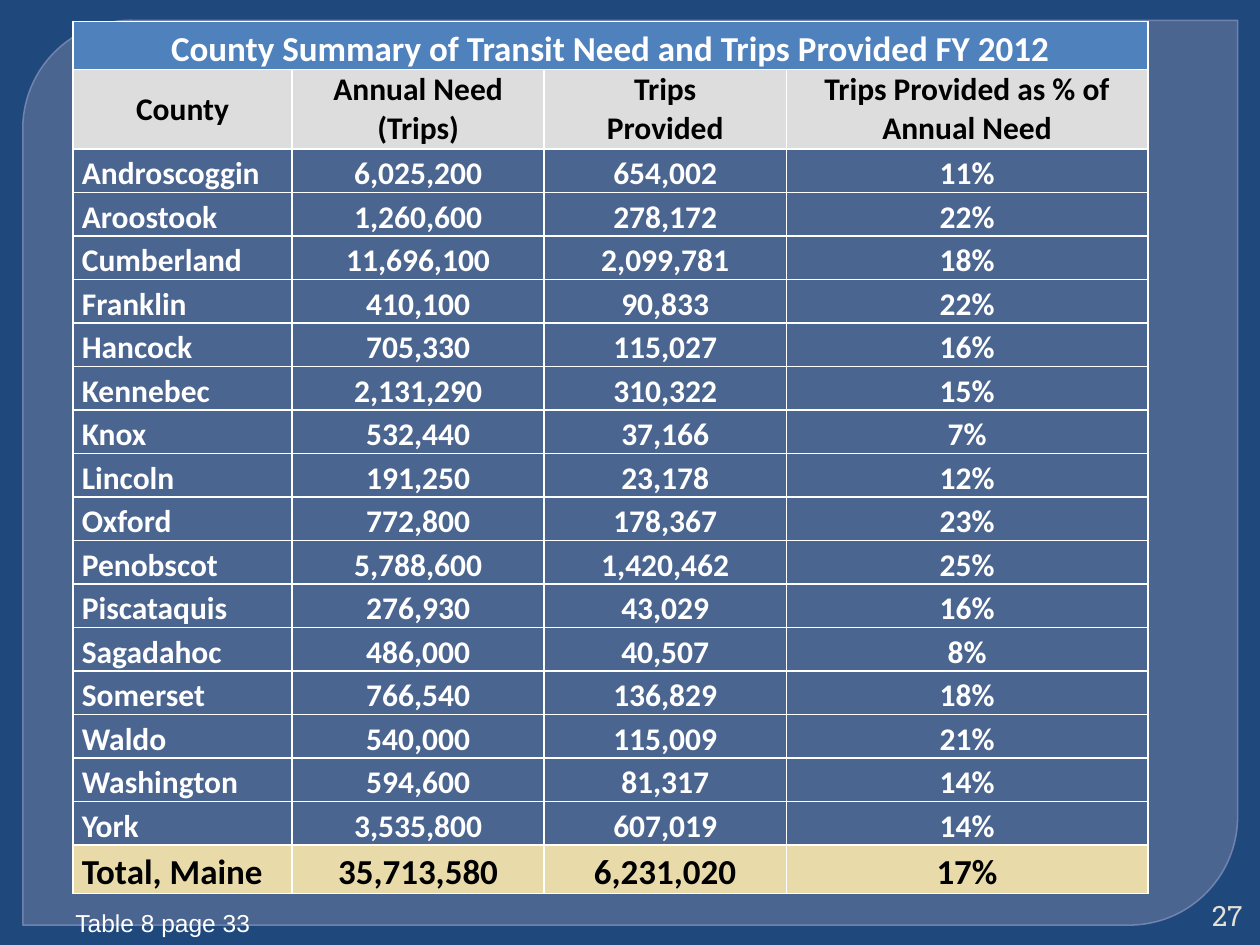
from lxml import etree
from pptx import Presentation
from pptx.dml.color import RGBColor
from pptx.enum.shapes import MSO_SHAPE
from pptx.enum.text import MSO_ANCHOR, PP_ALIGN
from pptx.oxml import parse_xml
from pptx.oxml.ns import nsdecls, qn
from pptx.util import Cm, Pt

LEFT, MID, RIGHT = PP_ALIGN.LEFT, PP_ALIGN.CENTER, PP_ALIGN.RIGHT
TOP, CENTRE = MSO_ANCHOR.TOP, MSO_ANCHOR.MIDDLE
THEME = {
    "back": "1F497D", "panel": "63759D", "edge": "7989B3",
    "band": "4F81BD", "head": "DDDDDD", "total": "E9DBA9",
    "light": "FFFFFF", "dark": "000000", "page": "E3E1D7",
    "body": "Calibri", "note": "Arial", "number": "Roboto Slab",
    "large": 20, "normal": 18, "mid": 16, "small": 14,
}
TITLE = "County Summary of Transit Need and Trips Provided FY 2012"
HEADS = ("County", "Annual Need\n(Trips)", "Trips\nProvided",
         "Trips Provided as % of Annual Need")
COUNTIES = [
    ("Androscoggin", "6,025,200", "654,002", "11%"),
    ("Aroostook", "1,260,600", "278,172", "22%"),
    ("Cumberland", "11,696,100", "2,099,781", "18%"),
    ("Franklin", "410,100", "90,833", "22%"),
    ("Hancock", "705,330", "115,027", "16%"),
    ("Kennebec", "2,131,290", "310,322", "15%"),
    ("Knox", "532,440", "37,166", "7%"),
    ("Lincoln", "191,250", "23,178", "12%"),
    ("Oxford", "772,800", "178,367", "23%"),
    ("Penobscot", "5,788,600", "1,420,462", "25%"),
    ("Piscataquis", "276,930", "43,029", "16%"),
    ("Sagadahoc", "486,000", "40,507", "8%"),
    ("Somerset", "766,540", "136,829", "18%"),
    ("Waldo", "540,000", "115,009", "21%"),
    ("Washington", "594,600", "81,317", "14%"),
    ("York", "3,535,800", "607,019", "14%"),
]
TOTAL = ("Total, Maine", "35,713,580", "6,231,020", "17%")


def write(frame, text, font, size, tint, align, bold=False, **gaps):
    """Fill a text frame; gaps are paragraph spacing values."""
    frame.word_wrap = True
    frame.text = text
    for para in frame.paragraphs:
        for key, value in {"alignment": align, **gaps}.items():
            setattr(para, key, value)
        look = {"name": THEME[font], "size": Pt(THEME[size]), "bold": bold}
        for key, value in look.items():
            setattr(para.runs[0].font, key, value)
        para.runs[0].font.color.rgb = RGBColor.from_string(THEME[tint])


def fade(fill, tint, alpha):
    """Set a solid fill with the given opacity in percent."""
    fill.solid()
    fill.fore_color.rgb = RGBColor.from_string(THEME[tint])
    node = fill._xPr.find(qn("a:solidFill"))[0]
    etree.SubElement(node, qn("a:alpha"), val=str(alpha * 1000))


deck = Presentation()
deck.slide_width, deck.slide_height = Cm(25.4), Cm(19.05)
slide = deck.slides.add_slide(deck.slide_layouts[6])
slide.background.fill.solid()
slide.background.fill.fore_color.rgb = RGBColor.from_string(THEME["back"])

panel = slide.shapes.add_shape(MSO_SHAPE.ROUND_2_DIAG_RECTANGLE,
                               Cm(0.46), Cm(0.41), Cm(24.49), Cm(18.24))
panel.shadow.inherit = False
panel.adjustments[0] = 0.12
panel.adjustments[1] = 0
fade(panel.fill, "panel", 65)
fade(panel.line.fill, "edge", 88)
panel.line.width = Pt(0.87)

number = slide.shapes.add_textbox(Cm(24), Cm(18.08), Cm(1.3), Cm(0.76))
write(number.text_frame, "27", "number", "mid", "page", RIGHT)
number.text_frame.vertical_anchor = CENTRE

# Each row: texts, size, text colour, fill, height in cm, paragraph spacing
wide = {"line_spacing": 1.15, "space_before": Pt(6), "space_after": Pt(6)}
close = {**wide, "space_before": Pt(3), "space_after": Pt(3)}
rows = [((TITLE,), "large", "light", "band", 0.91, wide),
        (HEADS, "normal", "dark", "head", 1.6, {})]
rows += [(texts, "normal", "light", None, 0.81, close) for texts in COUNTIES]
rows.append((TOTAL, "large", "dark", "total", 0.91, close))

widths = (4.42, 5.08, 4.88, 7.29)
table = slide.shapes.add_table(len(rows), len(widths), Cm(1.47), Cm(0.43),
                               Cm(sum(widths)),
                               Cm(sum(row[4] for row in rows))).table
table.first_row = table.horz_banding = False
for column, width in zip(table.columns, widths):
    column.width = Cm(width)
table.cell(0, 0).merge(table.cell(0, len(widths) - 1))

inset = {"margin_left": Cm(0.18), "margin_right": Cm(0.18),
         "margin_top": 0, "margin_bottom": 0}
for r, (texts, size, tint, fill, height, gaps) in enumerate(rows):
    table.rows[r].height = Cm(height)
    for c in range(len(widths)):
        cell = table.cell(r, c)
        anchor = CENTRE if texts is HEADS else TOP
        for key, value in {**inset, "vertical_anchor": anchor}.items():
            setattr(cell, key, value)
        for side in "LRTB":
            cell._tc.get_or_add_tcPr().append(parse_xml(
                f'<a:ln{side} {nsdecls("a")} w="12700"><a:solidFill>'
                f'<a:srgbClr val="{THEME["light"]}"/></a:solidFill></a:ln{side}>'))
        if fill:
            cell.fill.solid()
            cell.fill.fore_color.rgb = RGBColor.from_string(THEME[fill])
        else:
            cell.fill.background()
        if c < len(texts):
            align = LEFT if c == 0 and r > 1 else MID
            write(cell.text_frame, texts[c], "body", size, tint, align,
                  True, **gaps)

note = slide.shapes.add_textbox(Cm(1.27), Cm(18.19), Cm(6.78), Cm(0.86))
write(note.text_frame, "Table 8 page 33", "note", "small", "light", LEFT)

deck.save("out.pptx")
